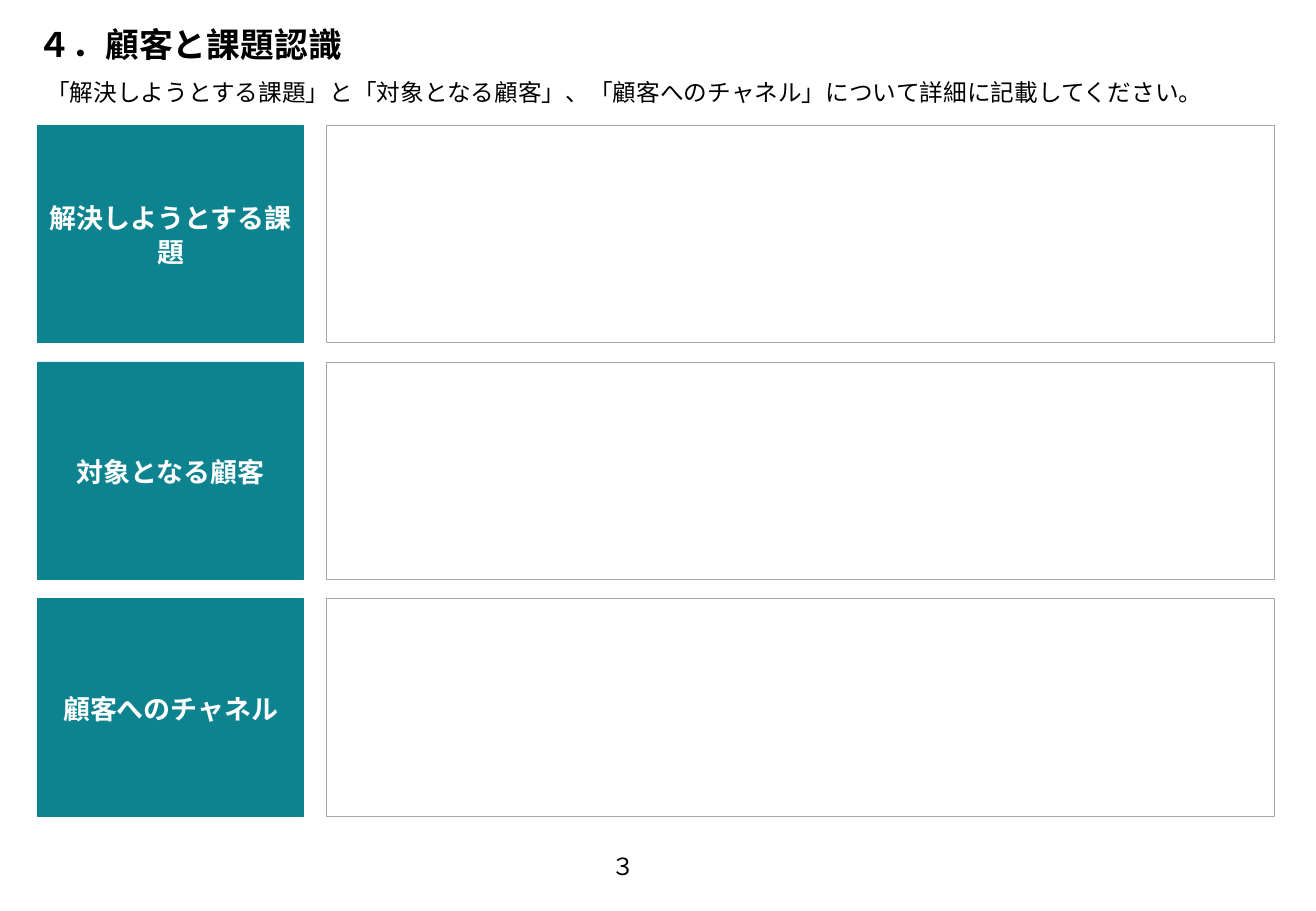
from dataclasses import dataclass
from pptx import Presentation
from pptx import util as u
from pptx.dml.color import RGBColor
from pptx.enum import shapes, text
from pptx.oxml.ns import qn

TITLE = "４．顧客と課題認識"
LEAD = "「解決しようとする課題」と「対象となる顧客」、「顧客へのチャネル」について詳細に記載してください。"
LABELS = ["解決しようとする課題", "対象となる顧客", "顧客へのチャネル"]
PAGE = "３"


@dataclass(frozen=True)
class Theme:
    teal: str = "0D8390"
    gray: str = "A7A8AA"
    white: str = "FFFFFF"
    black: str = "000000"
    sans: str = "Noto Sans CJK JP"
    latin: str = "Arial"
    head: int = 20
    label: int = 16
    body: int = 14
    rule: float = 0.5


T = Theme()
WIDE, HIGH = 10.83, 7.5
LEFT, TOP, ROW, STEP = 0.31, 1.03, 1.79, 1.95
SIDE, FIELD, GAP = 2.19, 7.8, 0.19
PAD = 0.08


def rgb(code):
    return RGBColor.from_string(code)


def write(shape, words, size, color, face=T.sans, bold=False,
          align=text.PP_ALIGN.LEFT, pads=(0, 0, 0, 0),
          anchor=text.MSO_ANCHOR.MIDDLE, wrap=True, space=1.0):
    frame = shape.text_frame
    frame.auto_size = text.MSO_AUTO_SIZE.NONE
    frame.word_wrap = wrap
    frame.vertical_anchor = anchor
    (frame.margin_left, frame.margin_top,
     frame.margin_right, frame.margin_bottom) = map(u.Inches, pads)
    para = frame.paragraphs[0]
    para.alignment = align
    para.line_spacing = space
    run = para.add_run()
    run.text = words
    font = run.font
    font.size, font.bold, font.name = u.Pt(size), bold, face
    font.color.rgb = rgb(color)
    east = font._element.makeelement(qn("a:ea"), {"typeface": T.sans})
    font._element.find(qn("a:latin")).addnext(east)


def panel(slide, x, y, w, fill, line):
    box = slide.shapes.add_shape(
        shapes.MSO_SHAPE.RECTANGLE, *map(u.Inches, (x, y, w, ROW)))
    box.shadow.inherit = False
    box.fill.solid()
    box.fill.fore_color.rgb = rgb(fill)
    box.line.color.rgb = rgb(line)
    box.line.width = u.Pt(T.rule)
    return box


def main():
    deck = Presentation()
    deck.slide_width, deck.slide_height = u.Inches(WIDE), u.Inches(HIGH)
    slide = deck.slides.add_slide(deck.slide_layouts[5])

    title = slide.shapes.title
    title.left, title.top, title.width, title.height = map(
        u.Inches, (0.16, 0.14, 9.92, 0.45))
    write(title, TITLE, T.head, T.black, bold=True, pads=(0.15, 0, 0, 0))

    for row, label in enumerate(LABELS):
        y = TOP + row * STEP
        side = panel(slide, LEFT, y, SIDE, T.teal, T.teal)
        write(side, label, T.label, T.white, T.latin, True,
              text.PP_ALIGN.CENTER, (PAD,) * 4, space=1.06)
        panel(slide, LEFT + SIDE + GAP, y, FIELD, T.white, T.gray)

    lead = slide.shapes.add_textbox(*map(u.Inches, (0.3, 0.52, 6.84, 0.47)))
    write(lead, LEAD, T.body, T.black, pads=(PAD, 0, 0, 0), wrap=False)

    page = slide.shapes.add_textbox(*map(u.Inches, (5.03, 7.01, 0.2, 0.24)))
    write(page, PAGE, T.body, T.black, anchor=text.MSO_ANCHOR.TOP, wrap=False)

    deck.save("out.pptx")


if __name__ == "__main__":
    main()
